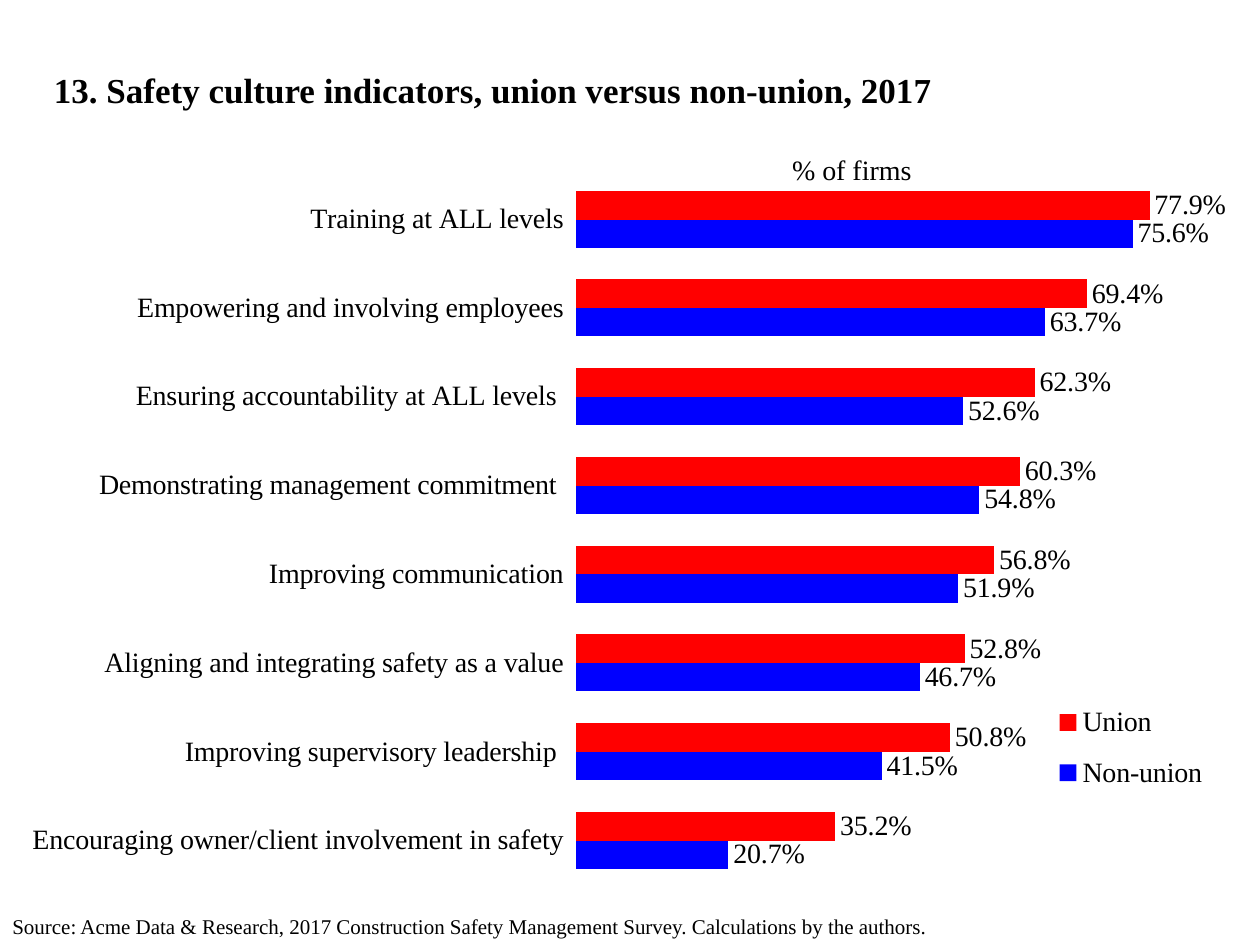
from lxml import etree
from pptx import Presentation
from pptx.chart.data import CategoryChartData
from pptx.dml.color import RGBColor
from pptx.enum.chart import XL_CHART_TYPE as ChartType
from pptx.enum.chart import XL_LABEL_POSITION as LabelPos
from pptx.enum.chart import XL_LEGEND_POSITION as LegendPos
from pptx.enum.chart import XL_TICK_MARK as TickMark
from pptx.enum.text import MSO_ANCHOR as Anchor
from pptx.enum.text import PP_ALIGN as Align
from pptx.oxml.ns import qn
from pptx.util import Inches, Pt

FONT = "Times New Roman"
COLORS = {"text": "000000", "Union": "FF0000", "Non-union": "0000FF"}
INDICATORS = [
    ("Encouraging owner/client involvement in safety", 0.207, 0.352),
    ("Improving supervisory leadership ", 0.415, 0.508),
    ("Aligning and integrating safety as a value", 0.467, 0.528),
    ("Improving communication", 0.519, 0.568),
    ("Demonstrating management commitment ", 0.548, 0.603),
    (" Ensuring accountability at ALL levels ", 0.526, 0.623),
    (" Empowering and involving employees", 0.637, 0.694),
    ("Training at ALL levels", 0.756, 0.779),
]


def set_font(font, size, bold=False):
    font.name = FONT
    font.size = Pt(size)
    font.bold = bold
    font.color.rgb = RGBColor.from_string(COLORS["text"])


def add_text(s, box, text, size, bold=False, align=Align.LEFT):
    tf = s.shapes.add_textbox(*map(Inches, box)).text_frame
    tf.word_wrap = True
    tf.vertical_anchor = Anchor.MIDDLE
    p = tf.paragraphs[0]
    p.text = text
    p.alignment = align
    set_font(p.font, size, bold)


def set_layout(element, box, before, inner=False):
    for old in element.findall(qn("c:layout")):
        element.remove(old)
    layout = etree.Element(qn("c:layout"))
    manual = etree.SubElement(layout, qn("c:manualLayout"))
    settings = [("layoutTarget", "inner")] if inner else []
    settings += [("xMode", "edge"), ("yMode", "edge")]
    settings += zip("xywh", box)
    for name, value in settings:
        etree.SubElement(manual, qn(f"c:{name}")).set("val", str(value))
    element.find(qn(before)).addprevious(layout)


def add_indicator_chart(s, box):
    names, non_union, union = zip(*INDICATORS)
    data = CategoryChartData(number_format="0.0%")
    data.categories = names
    data.add_series("Non-union", non_union)
    data.add_series("Union", union)
    chart = s.shapes.add_chart(
        ChartType.BAR_CLUSTERED, *map(Inches, box), data).chart
    chart.has_title = False
    set_font(chart.font, 16)

    plot = chart.plots[0]
    plot.gap_width = 110
    plot.overlap = 2
    plot.vary_by_categories = False
    for series in plot.series:
        series.format.fill.solid()
        series.format.fill.fore_color.rgb = RGBColor.from_string(
            COLORS[series.name])
        labels = series.data_labels
        labels.show_value = True
        labels.number_format = "0.0%"
        labels.number_format_is_linked = False
        labels.position = LabelPos.OUTSIDE_END

    chart.category_axis.major_tick_mark = TickMark.OUTSIDE
    chart.category_axis.format.line.fill.background()
    values = chart.value_axis
    values.minimum_scale = 0
    values.maximum_scale = 0.9
    values.has_major_gridlines = False
    values.visible = False

    chart.has_legend = True
    legend = chart.legend
    legend.position = LegendPos.RIGHT
    legend.include_in_layout = False
    set_font(legend.font, 16)
    plot_area = chart.element.find(".//" + qn("c:plotArea"))
    set_layout(plot_area, (0.457, 0.047, 0.535, 0.952), "c:barChart", True)
    legend_element = chart.element.find(".//" + qn("c:legend"))
    set_layout(legend_element, (0.83, 0.735, 0.15, 0.16), "c:overlay")


def main():
    prs = Presentation()
    prs.slide_width = Inches(10)
    prs.slide_height = Inches(7.5)
    s = prs.slides.add_slide(prs.slide_layouts[6])
    add_text(s, (0.33, 0.42, 9.33, 0.58),
             "13. Safety culture indicators, union versus non-union, 2017",
             20, bold=True)
    add_indicator_chart(s, (0.08, 1.11, 9.83, 5.92))
    add_text(s, (6, 1.16, 1.52, 0.37), "% of firms", 16, align=Align.CENTER)
    add_text(s, (0, 7.2, 10, 0.3),
             "Source: Acme Data & Research, 2017 Construction Safety "
             "Management Survey. Calculations by the authors.", 12)
    prs.save("out.pptx")


if __name__ == "__main__":
    main()
